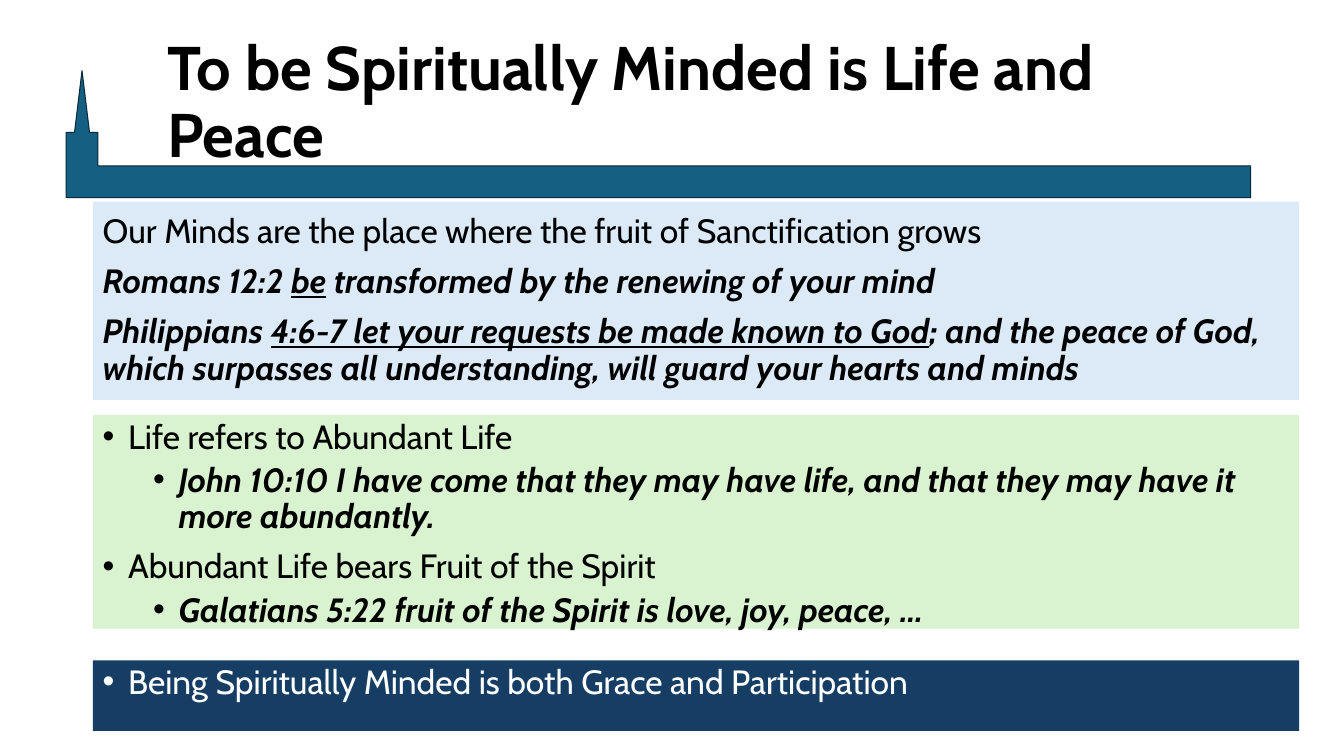
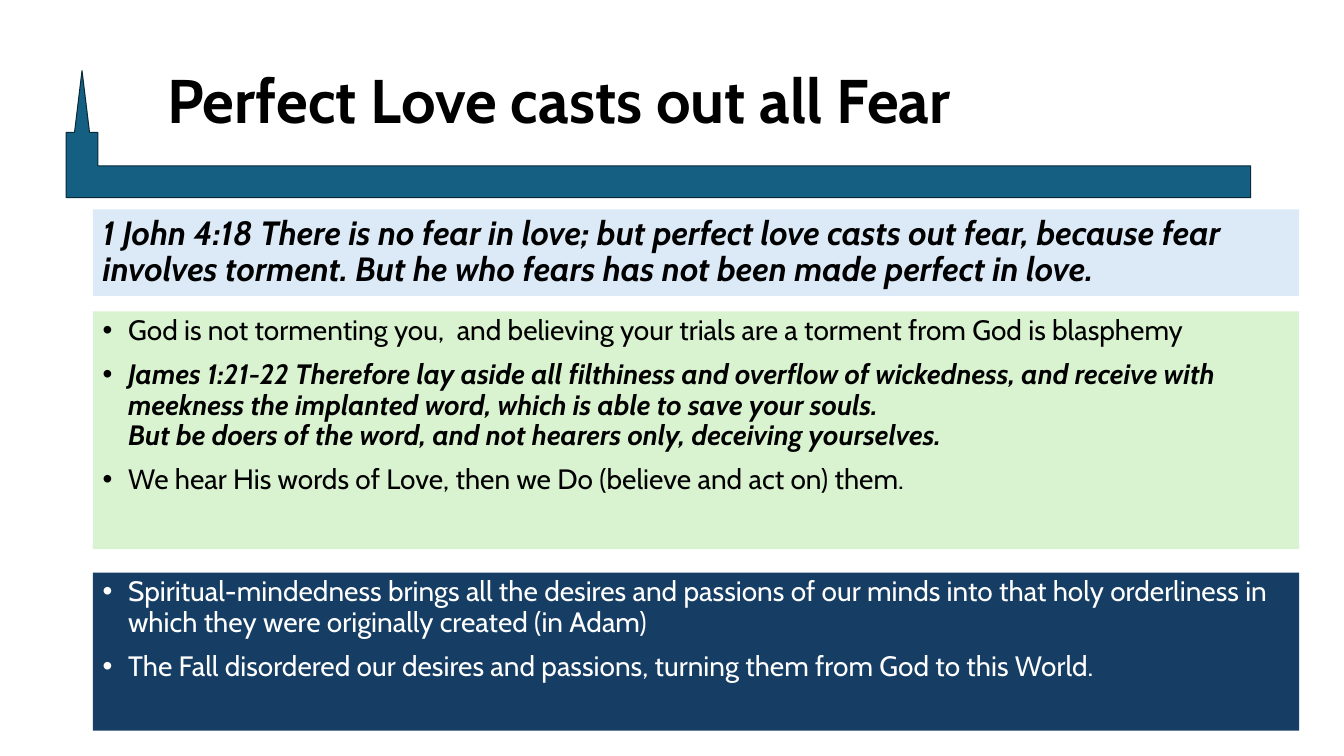
from typing import NamedTuple

from lxml import etree
from pptx import Presentation
from pptx.dml.color import RGBColor
from pptx.enum.shapes import MSO_SHAPE
from pptx.enum.text import MSO_ANCHOR, PP_ALIGN
from pptx.oxml.ns import qn
from pptx.util import Cm, Pt

RECTANGLE = MSO_SHAPE.RECTANGLE
BENT_ARROW = MSO_SHAPE.BENT_UP_ARROW
TOP, MIDDLE = MSO_ANCHOR.TOP, MSO_ANCHOR.MIDDLE
LEFT = PP_ALIGN.LEFT

FONT = "Cabin"
BLACK = RGBColor(0x00, 0x00, 0x00)
WHITE = RGBColor(0xFF, 0xFF, 0xFF)
TEAL = RGBColor(0x15, 0x60, 0x82)
DARK_TEAL = RGBColor(0x09, 0x2A, 0x39)
PALE_BLUE = RGBColor(0xDC, 0xEA, 0xF7)
PALE_GREEN = RGBColor(0xD9, 0xF2, 0xD0)
NAVY = RGBColor(0x16, 0x3E, 0x64)

PANEL_LEFT, PANEL_WIDTH = Cm(2.34), Cm(30.4)
LINE_SPACING = 0.9
BULLET_HANG = Cm(0.64)
LEVEL_STEP = Cm(1.27)


class Item(NamedTuple):
    text: str
    verse: bool = False
    level: int = 0


class Panel(NamedTuple):
    top: float
    height: float
    items: list


def format_run(r, size, color, bold=False, italic=False):
    font = r.font
    font.name = FONT
    font.size = Pt(size)
    font.color.rgb = color
    font.bold = bold
    font.italic = italic


def add_bullet(p, level):
    p.level = level
    pPr = p._p.get_or_add_pPr()
    pPr.set("marL", str(BULLET_HANG + level * LEVEL_STEP))
    pPr.set("indent", str(-BULLET_HANG))
    etree.SubElement(pPr, qn("a:buFont")).set("typeface", "Arial")
    etree.SubElement(pPr, qn("a:buChar")).set("char", "•")


def write_item(p, item, size, color):
    pieces = item.text.split("_")
    p.text = pieces[0]
    for i, piece in enumerate(pieces[1:], 1):
        r = p.add_run()
        r.text = piece
        r.font.underline = i % 2 == 1
    for r in p.runs:
        format_run(r, size, color, item.verse, item.verse)


def add_church_band(slide):
    sp = slide.shapes.add_shape(BENT_ARROW, Cm(1.88), Cm(1.78), Cm(29.64), Cm(3.2))
    for i, value in enumerate((0.25, 0.059, 0.487)):
        sp.adjustments[i] = value
    sp._element.spPr.find(qn("a:xfrm")).set("flipH", "1")
    sp.shadow.inherit = False
    sp.fill.solid()
    sp.fill.fore_color.rgb = TEAL
    sp.line.color.rgb = DARK_TEAL
    sp.line.width = Pt(0.75)


def add_title(slide, title):
    sp = slide.shapes.add_textbox(Cm(3.96), Cm(1.02), Cm(27.58), Cm(3.2))
    tf = sp.text_frame
    tf.word_wrap = True
    tf.vertical_anchor = MIDDLE
    tf.text = title
    p = tf.paragraphs[0]
    p.line_spacing = LINE_SPACING
    format_run(p.runs[0], 44, BLACK, bold=True)


def add_panel(slide, panel, fill, color, size, bulleted):
    sp = slide.shapes.add_shape(
        RECTANGLE, PANEL_LEFT, Cm(panel.top), PANEL_WIDTH, Cm(panel.height))
    sp.shadow.inherit = False
    sp.fill.solid()
    sp.fill.fore_color.rgb = fill
    sp.line.fill.background()
    tf = sp.text_frame
    tf.word_wrap = True
    tf.vertical_anchor = TOP if bulleted else MIDDLE
    for i, item in enumerate(panel.items):
        p = tf.add_paragraph() if i else tf.paragraphs[0]
        p.alignment = LEFT
        p.line_spacing = LINE_SPACING
        if i:
            p.space_before = Pt(5 if item.level else 10)
        if bulleted:
            add_bullet(p, item.level)
        write_item(p, item, size, color)


def add_slide(prs, title, point_size, scripture, points, conclusion):
    slide = prs.slides.add_slide(prs.slide_layouts[6])
    add_church_band(slide)
    add_title(slide, title)
    add_panel(slide, scripture, PALE_BLUE, BLACK, 24, bulleted=False)
    add_panel(slide, points, PALE_GREEN, BLACK, point_size, bulleted=True)
    add_panel(slide, conclusion, NAVY, WHITE, point_size, bulleted=True)


def main():
    prs = Presentation()
    prs.slide_width, prs.slide_height = Cm(33.87), Cm(19.05)

    add_slide(
        prs, "To be Spiritually Minded is Life and Peace", 24,
        Panel(5.08, 5, [
            Item("Our Minds are the place where the fruit of Sanctification grows"),
            Item("Romans 12:2 _be_ transformed by the renewing of your mind", True),
            Item("Philippians _4:6-7 let your requests be made known to God_; and the "
                 "peace of God, which surpasses all understanding, will guard your "
                 "hearts and minds", True),
        ]),
        Panel(10.46, 5.38, [
            Item("Life refers to Abundant Life"),
            Item("John 10:10 I have come that they may have life, and that they may "
                 "have it more abundantly.", True, 1),
            Item("Abundant Life bears Fruit of the Spirit"),
            Item("Galatians 5:22 fruit of the Spirit is love, joy, peace, …", True, 1),
        ]),
        Panel(16.64, 1.78, [
            Item("Being Spiritually Minded is both Grace and Participation"),
        ]))

    add_slide(
        prs, "Perfect Love casts out all Fear", 20,
        Panel(5.28, 2.18, [
            Item("1 John 4:18 There is no fear in love; but perfect love casts out "
                 "fear, because fear involves torment. But he who fears has not been "
                 "made perfect in love.", True),
        ]),
        Panel(7.85, 5.99, [
            Item("God is not tormenting you,  and believing your trials are a torment "
                 "from God is blasphemy"),
            Item("James 1:21-22 Therefore lay aside all filthiness and overflow of "
                 "wickedness, and receive with meekness the implanted word, which is "
                 "able to save your souls.\vBut be doers of the word, and not hearers "
                 "only, deceiving yourselves.", True),
            Item("We hear His words of Love, then we Do (believe and act on) them."),
        ]),
        Panel(14.43, 3.98, [
            Item("Spiritual-mindedness brings all the desires and passions of our "
                 "minds into that holy orderliness in which they were originally "
                 "created (in Adam)"),
            Item("The Fall disordered our desires and passions, turning them from God "
                 "to this World."),
        ]))

    prs.save("out.pptx")


if __name__ == "__main__":
    main()
